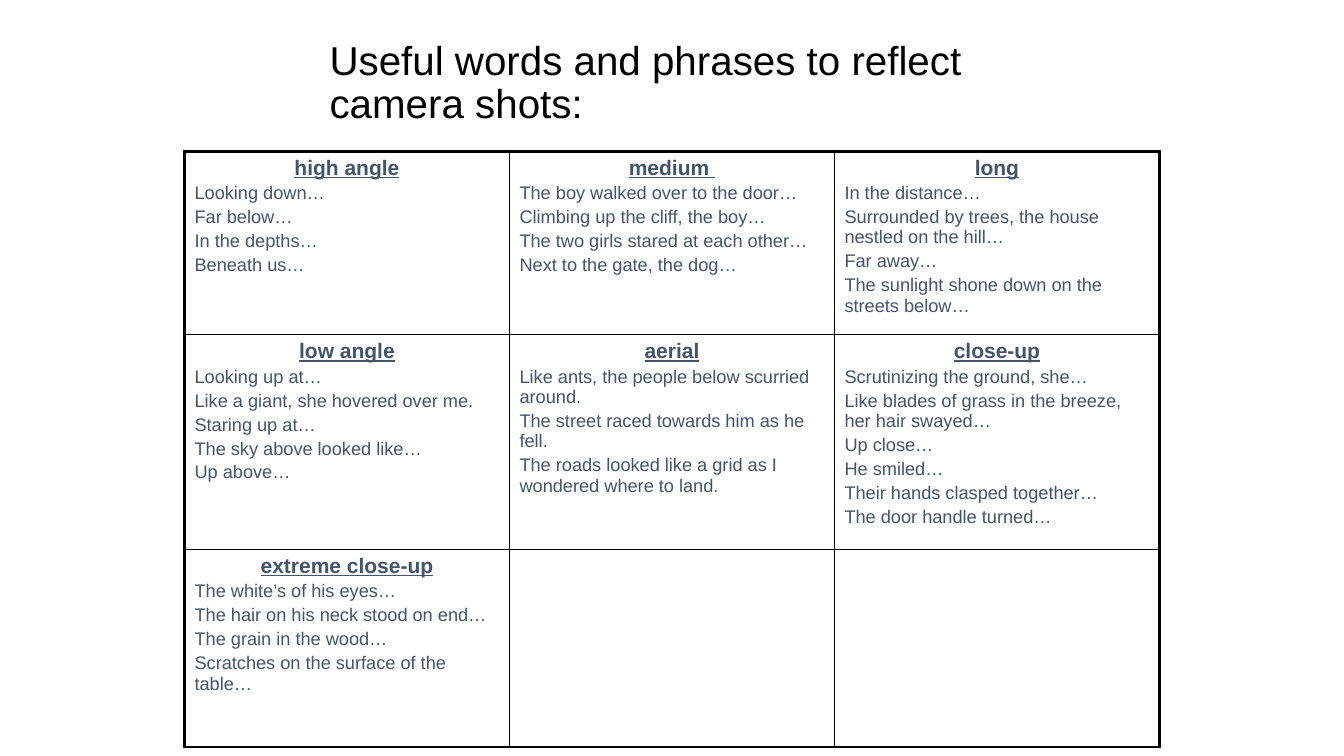
import pptx
import pptx.util
import pptx.dml.color
import pptx.enum.text
import pptx.oxml.ns
import lxml.etree

Inches, Pt = pptx.util.Inches, pptx.util.Pt
RGB = pptx.dml.color.RGBColor.from_string
ALIGN = pptx.enum.text.PP_ALIGN
ANCHOR = pptx.enum.text.MSO_ANCHOR

TITLE = "Useful words and phrases to reflect camera shots:"
SHOTS = [
    ("high angle", ["Looking down…", "Far below…", "In the depths…", "Beneath us…"]),
    ("medium ", ["The boy walked over to the door…", "Climbing up the cliff, the boy…",
                 "The two girls stared at each other…", "Next to the gate, the dog…"]),
    ("long", ["In the distance…", "Surrounded by trees, the house nestled on the hill…",
              "Far away…", "The sunlight shone down on the streets below…"]),
    ("low angle", ["Looking up at…", "Like a giant, she hovered over me.", "Staring up at…",
                   "The sky above looked like…", "Up above…"]),
    ("aerial", ["Like ants, the people below scurried around.",
                "The street raced towards him as he fell.",
                "The roads looked like a grid as I wondered where to land."]),
    ("close-up", ["Scrutinizing the ground, she…",
                  "Like blades of grass in the breeze, her hair swayed…", "Up close…",
                  "He smiled…", "Their hands clasped together…", "The door handle turned…"]),
    ("extreme close-up", ["The white’s of his eyes…", "The hair on his neck stood on end…",
                          "The grain in the wood…", "Scratches on the surface of the table…"]),
]
COLORS = {"title": "000000", "text": "44546A", "line": "000000", "cell": "FFFFFF"}
HEAD = {"size": Pt(15), "bold": True, "underline": True, "name": "Arial"}
BODY = {"size": Pt(13), "bold": False, "underline": False, "name": "Arial"}
COLS, WIDTH = 3, 9.67
ROWS = [1.82, 2.13, 1.96]
THICK, THIN = 2.25, 1


def style(font, form, color):
    for key, val in form.items():
        setattr(font, key, val)
    font.color.rgb = RGB(COLORS[color])


def border(cell, row, col):
    """Draw thick lines on the table's outer sides and thin ones inside."""
    outer = {"L": col == 0, "R": col == COLS - 1, "T": row == 0, "B": row == len(ROWS) - 1}
    props = cell._tc.get_or_add_tcPr()
    qn = pptx.oxml.ns.qn
    for spot, (side, edge) in enumerate(outer.items()):
        line = lxml.etree.Element(qn("a:ln" + side), w=str(Pt(THICK if edge else THIN)))
        fill = lxml.etree.SubElement(line, qn("a:solidFill"))
        lxml.etree.SubElement(fill, qn("a:srgbClr"), val=COLORS["line"])
        props.insert(spot, line)


def write(frame, head, lines):
    for num, text in enumerate([head] + lines):
        para = frame.paragraphs[0] if num == 0 else frame.add_paragraph()
        para.alignment = ALIGN.LEFT if num else ALIGN.CENTER
        para.space_before = Pt(2.6 if num else 0)
        run = para.add_run()
        run.text = text
        style(run.font, BODY if num else HEAD, "text")


def main():
    deck = pptx.Presentation()
    deck.slide_width, deck.slide_height = Inches(13.33), Inches(7.5)
    slide = deck.slides.add_slide(deck.slide_layouts[6])

    box = slide.shapes.add_textbox(Inches(3.17), Inches(0.42), Inches(6.67), Inches(0.83))
    frame = box.text_frame
    frame.word_wrap = True
    frame.vertical_anchor = ANCHOR.MIDDLE
    para = frame.paragraphs[0]
    para.line_spacing = 0.9
    run = para.add_run()
    run.text = TITLE
    style(run.font, {"size": Pt(28.8), "name": "Arial"}, "title")

    table = slide.shapes.add_table(len(ROWS), COLS, Inches(1.83), Inches(1.5),
                                   Inches(WIDTH), Inches(sum(ROWS))).table
    table.first_row = table.horz_banding = False
    for row, high in enumerate(ROWS):
        table.rows[row].height = Inches(high)
        for col in range(COLS):
            cell = table.cell(row, col)
            cell.fill.solid()
            cell.fill.fore_color.rgb = RGB(COLORS["cell"])
            border(cell, row, col)
            spot = row * COLS + col
            if spot < len(SHOTS):
                write(cell.text_frame, *SHOTS[spot])

    deck.save("out.pptx")


if __name__ == "__main__":
    main()
